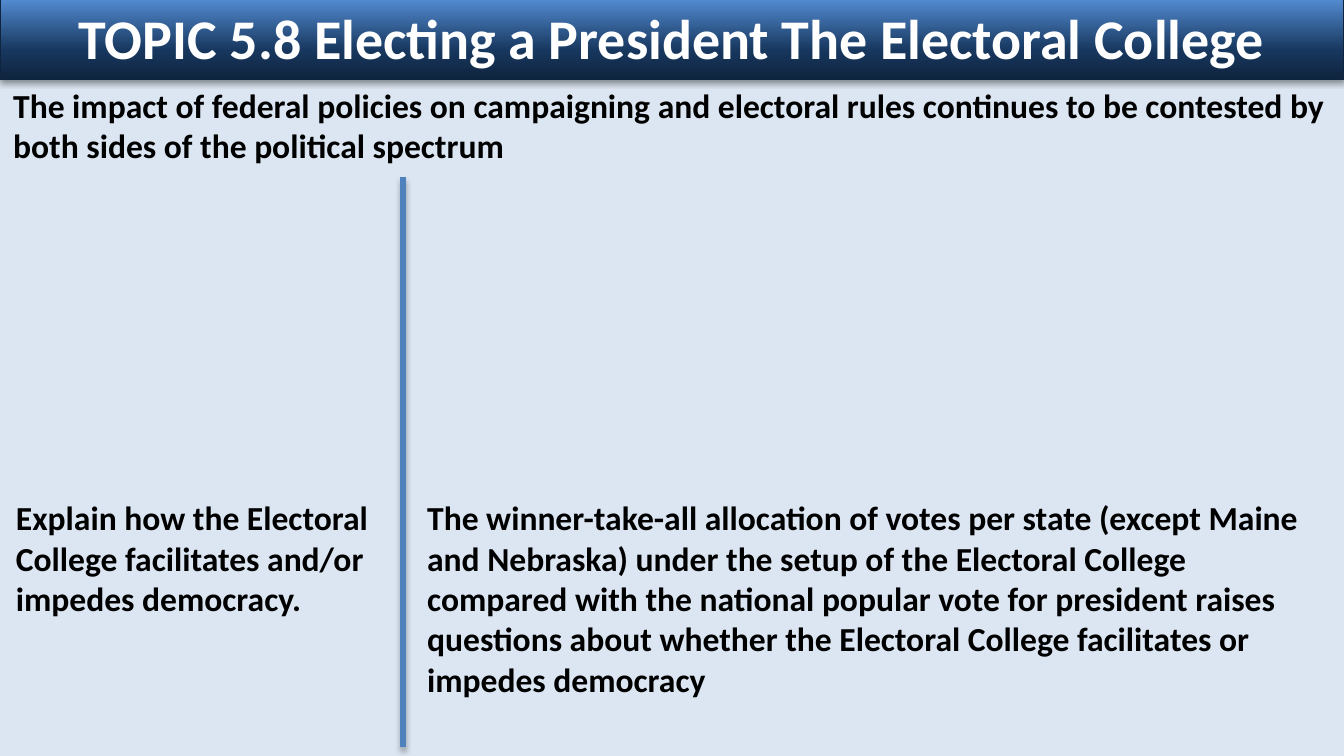
"""Build the Electoral College topic slide."""
import pptx
import pptx.util
import pptx.dml.color
import pptx.enum.shapes
import pptx.enum.text
import pptx.oxml
import pptx.oxml.ns

Inches, Pt = pptx.util.Inches, pptx.util.Pt
RGB = pptx.dml.color.RGBColor
Align = pptx.enum.text.PP_ALIGN
qn = pptx.oxml.ns.qn

PALE = RGB(0xDC, 0xE6, 0xF2)
NAVY = RGB(0x0F, 0x24, 0x3E)
DEEP = RGB(0x17, 0x37, 0x5E)
SKY = RGB(0x55, 0x8E, 0xD5)
BLUE = RGB(0x4F, 0x81, 0xBD)
WHITE = RGB(0xFF, 0xFF, 0xFF)
BLACK = RGB(0, 0, 0)

WIDE = 10
HIGH = WIDE * 9 / 16
TITLE = "TOPIC 5.8 Electing a President The Electoral College"
BAR = (0, -0.02, WIDE, 0.61)
STOPS = [(0, NAVY), (35, DEEP), (100, SKY)]
RULE = (3, 1.32, 3, 5.56)
NOTES = [
    ((0, 0.58, WIDE, 0.71), [
        "The impact of federal policies on campaigning and electoral rules "
        "continues to be contested by both sides of the political spectrum"]),
    ((0.02, 3.65, 2.85, 1.01), [
        "Explain how the Electoral",
        "College facilitates and/or",
        "impedes democracy."]),
    ((3.08, 3.65, 6.92, 1.62), [
        "The winner-take-all allocation of votes per state (except Maine and "
        "Nebraska) under the setup of the Electoral College compared with the "
        "national popular vote for president raises questions about whether "
        "the Electoral College facilitates or impedes democracy"]),
]
HEAD = {"size": Pt(30), "name": "Calibri", "bold": True}
BODY = {**HEAD, "size": Pt(18)}
FRAME = {
    "word_wrap": True,
    "auto_size": pptx.enum.text.MSO_AUTO_SIZE.SHAPE_TO_FIT_TEXT,
    "vertical_anchor": pptx.enum.text.MSO_ANCHOR.TOP,
}


def apply(item, form):
    for key, value in form.items():
        setattr(item, key, value)


def write(shape, lines, form, color, align):
    frame = shape.text_frame
    apply(frame, FRAME)
    frame.text = "\n".join(lines)
    for para in frame.paragraphs:
        para.alignment = align
        for run in para.runs:
            apply(run.font, form)
            run.font.color.rgb = color


def shade(shape, dist, alpha):
    shape._element.spPr.append(pptx.oxml.parse_xml(
        f'<a:effectLst {pptx.oxml.ns.nsdecls("a")}>'
        f'<a:outerShdw blurRad="{Pt(3.1)}" dist="{Pt(dist)}" dir="5400000" '
        f'rotWithShape="0"><a:srgbClr val="{BLACK}">'
        f'<a:alpha val="{alpha * 1000}"/></a:srgbClr>'
        '</a:outerShdw></a:effectLst>'))


def blend(shape, stops):
    shape.fill.gradient()
    shape.fill.gradient_angle = 90
    group = shape._element.spPr.find(".//" + qn("a:gsLst"))
    group.clear()
    for place, color in stops:
        group.append(pptx.oxml.parse_xml(
            f'<a:gs {pptx.oxml.ns.nsdecls("a")} pos="{place * 1000}">'
            f'<a:srgbClr val="{color}"/></a:gs>'))


def main():
    deck = pptx.Presentation()
    deck.slide_width, deck.slide_height = Inches(WIDE), Inches(HIGH)
    slide = deck.slides.add_slide(deck.slide_layouts[6])
    slide.background.fill.solid()
    slide.background.fill.fore_color.rgb = PALE

    bar = slide.shapes.add_shape(
        pptx.enum.shapes.MSO_SHAPE.RECTANGLE, *map(Inches, BAR))
    blend(bar, STOPS)
    bar.line.color.rgb = NAVY
    bar.line.width = Pt(0.75)
    shade(bar, 1.6, 38)
    write(bar, [TITLE], HEAD, WHITE, Align.CENTER)

    rule = slide.shapes.add_connector(
        pptx.enum.shapes.MSO_CONNECTOR.STRAIGHT, *map(Inches, RULE))
    rule.line.color.rgb = BLUE
    rule.line.width = Pt(3)
    shade(rule, 1.8, 35)

    for box, lines in NOTES:
        note = slide.shapes.add_textbox(*map(Inches, box))
        write(note, lines, BODY, BLACK, Align.LEFT)
    deck.save("out.pptx")


if __name__ == "__main__":
    main()
